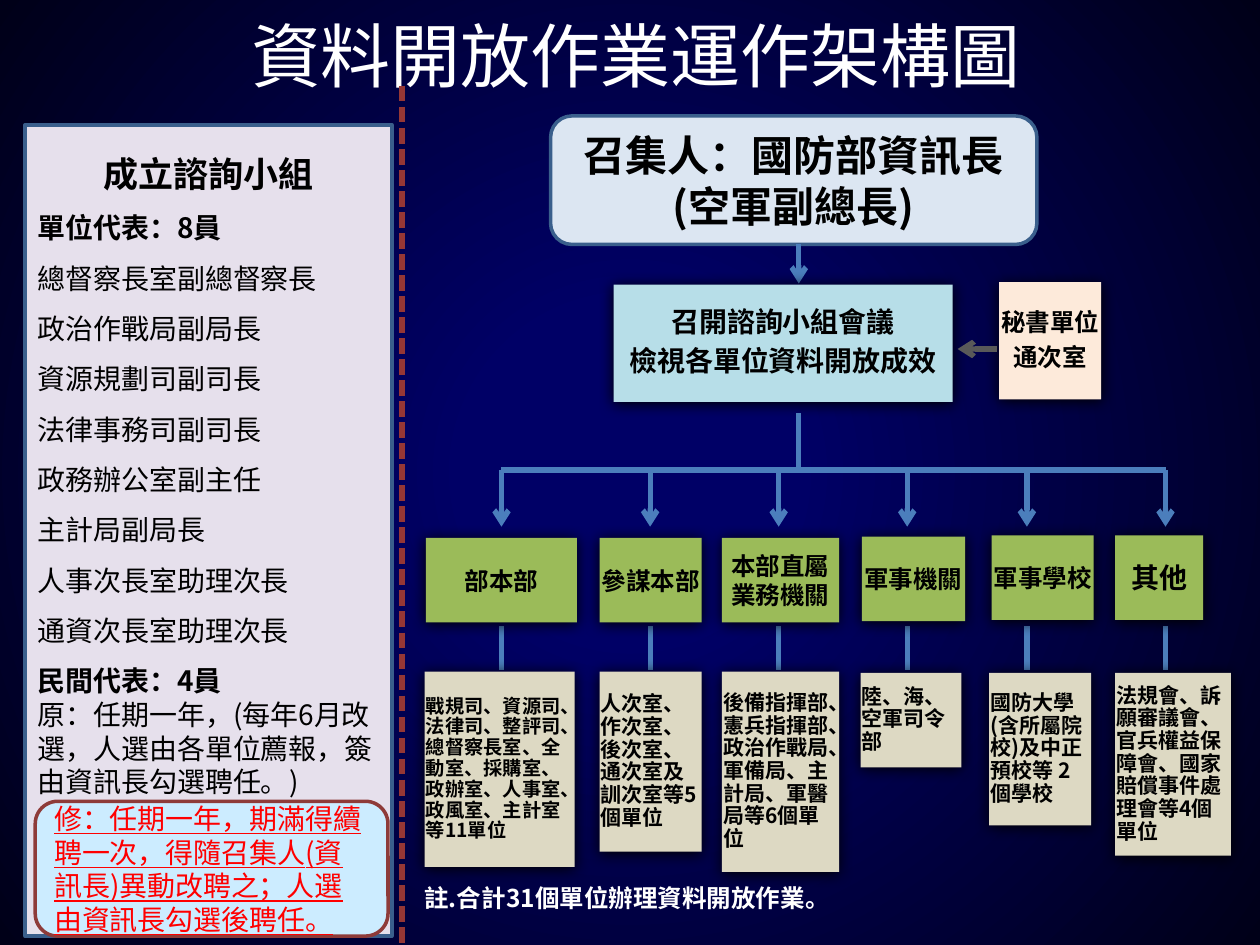
from collections import namedtuple
from dataclasses import dataclass

from lxml.etree import SubElement, fromstring
from pptx import Presentation
from pptx.dml.color import RGBColor
from pptx.enum.dml import MSO_LINE
from pptx.enum.shapes import MSO_CONNECTOR, MSO_SHAPE
from pptx.enum.text import MSO_ANCHOR, MSO_AUTO_SIZE, PP_ALIGN
from pptx.oxml.ns import nsdecls, qn
from pptx.util import Pt

PX = 9144  # 100 px to the inch


@dataclass(frozen=True)
class Theme:
    font: str = "Noto Sans CJK SC"
    night: str = "000066"
    night_edge: str = "000018"
    ink: str = "000000"
    white: str = "FFFFFF"
    red: str = "FF0000"
    panel: str = "E6E0EC"
    panel_line: str = "3A5F8C"
    convener: str = "DCE6F2"
    meeting: str = "B7DEE8"
    secretary: str = "FDEADA"
    head: str = "9BBB59"
    detail: str = "DDD9C3"
    revision: str = "CCECFF"
    revision_line: str = "8E3B39"
    divider: str = "953735"
    flow: str = "4B7EBC"
    side_flow: str = "595959"
    title_size: int = 40
    convener_size: int = 24
    heading_size: int = 20
    body_size: int = 16
    label_size: int = 14
    detail_size: int = 12
    small_size: int = 11


T = Theme()
Box = namedtuple("Box", "x y w h")
Unit = namedtuple("Unit", "axis name size head text text_size detail")

MEMBERS = ["總督察長室副總督察長", "政治作戰局副局長", "資源規劃司副司長", "法律事務司副司長",
           "政務辦公室副主任", "主計局副局長", "人事次長室助理次長", "通資次長室助理次長"]
TERM = "原：任期一年，(每年6月改選，人選由各單位薦報，簽由資訊長勾選聘任。)"
REVISION = "修：任期一年，期滿得續聘一次，得隨召集人(資訊長)異動改聘之；人選由資訊長勾選後聘任。"
UNITS = [
    Unit(398, "部本部", T.label_size, Box(338, 427, 120, 67),
         "戰規司、資源司、法律司、整評司、總督察長室、全動室、採購室、政辦室、人事室、政風室、主計室等11單位",
         T.small_size, Box(337, 533, 119, 155)),
    Unit(516, "參謀本部", T.label_size, Box(476, 427, 81, 67),
         "人次室、作次室、後次室、通次室及訓次室等5個單位", T.detail_size, Box(476, 533, 81, 143)),
    Unit(618, "本部直屬業務機關", T.label_size, Box(573, 427, 93, 67),
         "後備指揮部、憲兵指揮部、政治作戰局、軍備局、主計局、軍醫局等6個單位",
         T.detail_size, Box(573, 533, 93, 159)),
    Unit(720, "軍事機關", T.label_size, Box(684, 426, 82, 67),
         "陸、海、空軍司令部", T.detail_size, Box(683, 534, 80, 75)),
    Unit(815, "軍事學校", T.label_size, Box(787, 425, 81, 67),
         "國防大學(含所屬院校)及中正預校等 2個學校", T.detail_size, Box(785, 534, 81, 121)),
    Unit(925, "其他", T.body_size, Box(885, 425, 70, 67),
         "法規會、訴願審議會、官兵權益保障會、國家賠償事件處理會等4個單位",
         T.detail_size, Box(885, 534, 92, 145)),
]


def emu(*lengths):
    return [n * PX for n in lengths]


def rgb(code):
    return RGBColor.from_string(code)


def place(sp, box):
    sp.left, sp.top, sp.width, sp.height = emu(*box)


def paint(sp, fill, line=None):
    sp.fill.solid()
    sp.fill.fore_color.rgb = rgb(fill)
    if line:
        sp.line.color.rgb = rgb(line)
        sp.line.width = Pt(2)
    else:
        sp.line.fill.background()


def write(tf, lines, size, color=T.ink, bold=False, align=PP_ALIGN.LEFT, spacing=1.0, after=0):
    """Add one paragraph per line, starting with the empty first one."""
    for text in lines:
        p = tf.paragraphs[0] if not tf.paragraphs[0].runs else tf.add_paragraph()
        p.alignment, p.line_spacing = align, spacing
        p.space_before, p.space_after = Pt(0), Pt(after)
        r = p.add_run()
        r.text = text
        f = r.font
        f.name, f.size, f.bold = T.font, Pt(size), bold
        f.color.rgb = rgb(color)
        SubElement(r._r.get_or_add_rPr(), qn("a:ea"), typeface=T.font)


def add_block(s, box, fill, line=None, kind=MSO_SHAPE.RECTANGLE):
    sp = s.shapes.add_shape(kind, *emu(*box))
    sp.shadow.inherit = False
    paint(sp, fill, line)
    tf = sp.text_frame
    tf.word_wrap = True
    tf.vertical_anchor = MSO_ANCHOR.MIDDLE
    return sp


def add_card(s, box, fill, lines, size, **style):
    """Add a borderless box with tight margins and a soft shadow."""
    sp = add_block(s, box, fill)
    effects = sp._element.spPr.find(qn("a:effectLst"))
    effects.append(fromstring(
        f'<a:outerShdw {nsdecls("a")} blurRad="107950" dist="12700" dir="5400000">'
        f'<a:srgbClr val="{T.ink}"/></a:outerShdw>'))
    tf = sp.text_frame
    tf.margin_left = tf.margin_right = tf.margin_top = tf.margin_bottom = PX
    write(tf, lines, size, bold=True, **style)


def add_line(s, x1, y1, x2, y2, color=T.flow, arrow=False):
    c = s.shapes.add_connector(MSO_CONNECTOR.STRAIGHT, *emu(x1, y1, x2, y2))
    c.line.color.rgb = rgb(color)
    c.line.width = Pt(3)
    if arrow:
        SubElement(c.line._get_or_add_ln(), qn("a:tailEnd"), type="arrow")
    SubElement(c._element.spPr, qn("a:effectLst"))
    return c


def set_background(s):
    s.background.fill.gradient()
    grad = s.element.find(".//" + qn("a:gradFill"))
    stops = [(0, T.night), (21, T.night), (100, T.night_edge)]
    gs = "".join(f'<a:gs pos="{pos * 1000}"><a:srgbClr val="{c}"/></a:gs>' for pos, c in stops)
    grad.getparent().replace(grad, fromstring(
        f'<a:gradFill {nsdecls("a")} rotWithShape="1"><a:gsLst>{gs}</a:gsLst><a:path path="circle">'
        '<a:fillToRect l="50000" t="50000" r="50000" b="50000"/></a:path></a:gradFill>'))


def fill_title(sp, box):
    place(sp, box)
    tf = sp.text_frame
    tf.auto_size, tf.word_wrap = MSO_AUTO_SIZE.NONE, False
    write(tf, ["資料開放作業運作架構圖"], T.title_size, T.white, align=PP_ALIGN.CENTER)


def fill_panel(s, sp, box):
    place(sp, box)
    paint(sp, T.panel, T.panel_line)
    tf = sp.text_frame
    tf.auto_size, tf.word_wrap = MSO_AUTO_SIZE.NONE, True
    write(tf, ["成立諮詢小組"], T.heading_size, bold=True, align=PP_ALIGN.CENTER, spacing=1.5)
    write(tf, ["單位代表：8員"], T.body_size, bold=True, spacing=1.5)
    write(tf, MEMBERS, T.body_size, spacing=1.5)
    write(tf, ["民間代表：4員"], T.body_size, bold=True, spacing=1.5)
    write(tf, [TERM], T.body_size)
    for p in tf.paragraphs:
        pPr = p._p.get_or_add_pPr()
        pPr.set("marL", "0")
        pPr.set("indent", "0")
        SubElement(pPr, qn("a:buNone"))
    note = add_block(s, Box(box.x + 8, box.y + 537, 280, 107), T.revision, T.revision_line,
                     MSO_SHAPE.ROUNDED_RECTANGLE).text_frame
    write(note, [REVISION], T.body_size, T.red)
    note.paragraphs[0].runs[0].font.underline = True


def add_leadership(s, box):
    """Add the convener, the meeting below it and the secretariat beside that."""
    x, y, w, h = box
    axis = x + 197
    centred = dict(align=PP_ALIGN.CENTER, spacing=0.9, after=5)
    convener = add_block(s, Box(x, y, w, 102), T.convener, T.panel_line, MSO_SHAPE.ROUNDED_RECTANGLE)
    write(convener.text_frame, ["召集人：國防部資訊長", "(空軍副總長)"], T.convener_size,
          bold=True, align=PP_ALIGN.CENTER)
    add_line(s, axis, y + 102, axis, y + 133, arrow=True)
    add_card(s, Box(x + 356, y + 132, 81, 93), T.secretary, ["秘書單位", "通次室"], T.label_size, **centred)
    add_card(s, Box(x + 50, y + 134, 269, 93), T.meeting,
             ["召開諮詢小組會議", "檢視各單位資料開放成效"], T.body_size, **centred)
    add_line(s, x + 354, y + 185, x + 323, y + 185, T.side_flow, arrow=True)
    add_line(s, axis, y + 236, axis, y + h)


def add_units(s, bus_y):
    add_line(s, UNITS[0].axis, bus_y, UNITS[-1].axis, bus_y)
    for u in UNITS:
        add_line(s, u.axis, bus_y, u.axis, bus_y + 45, arrow=True)
        add_line(s, u.axis, bus_y + 124, u.axis, bus_y + 159)
        add_card(s, u.head, T.head, [u.name], u.size, align=PP_ALIGN.CENTER)
        add_card(s, u.detail, T.detail, [u.text], u.text_size, spacing=0.9)


def add_footnote(s, box):
    tf = s.shapes.add_textbox(*emu(*box)).text_frame
    tf.word_wrap = True
    write(tf, ["註.合計31個單位辦理資料開放作業。"], T.label_size, T.white, bold=True)


def main():
    prs = Presentation()
    prs.slide_width, prs.slide_height = emu(1000, 750)
    s = prs.slides.add_slide(prs.slide_layouts[1])
    set_background(s)
    fill_title(s.shapes.title, Box(186, 5, 637, 77))
    add_line(s, 319, 68, 319, 750, T.divider).line.dash_style = MSO_LINE.SQUARE_DOT
    fill_panel(s, s.placeholders[1], Box(20, 99, 291, 644))
    add_leadership(s, Box(437, 92, 386, 281))
    add_units(s, 373)
    add_footnote(s, Box(327, 696, 646, 34))
    prs.save("out.pptx")


if __name__ == "__main__":
    main()
